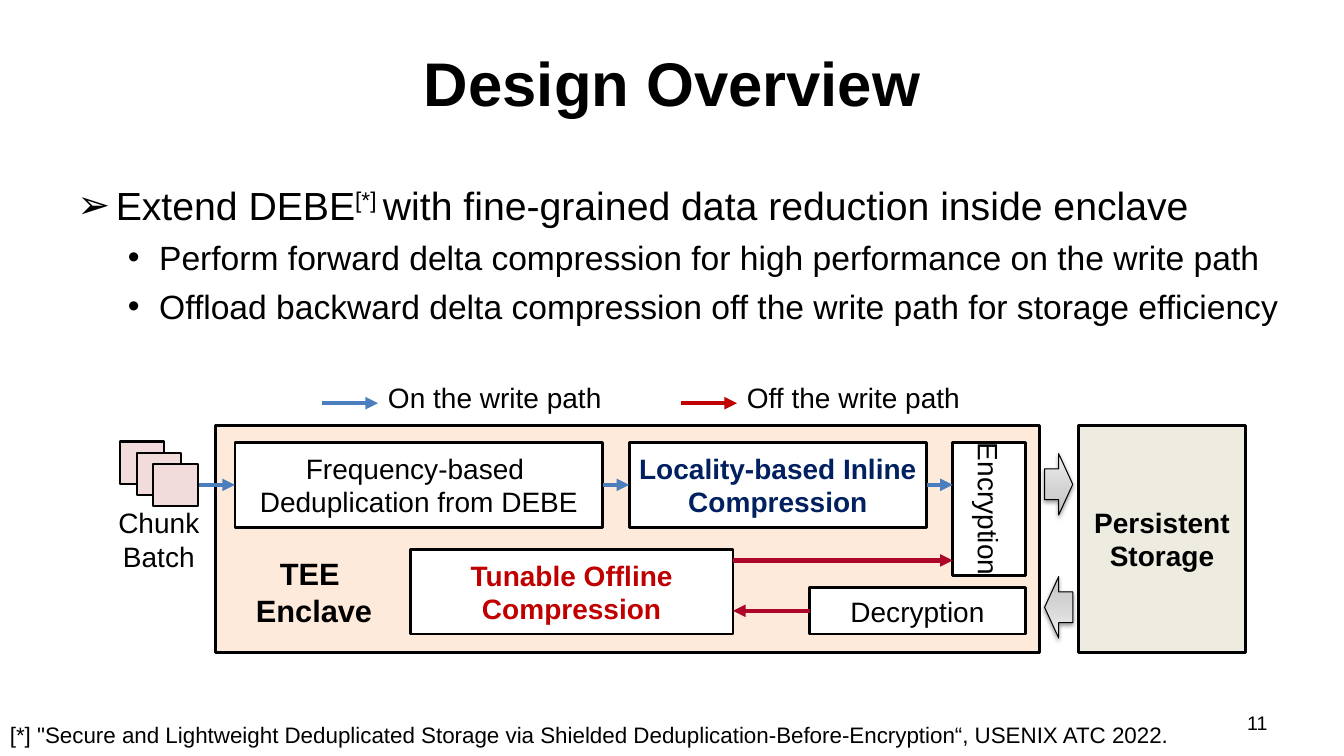
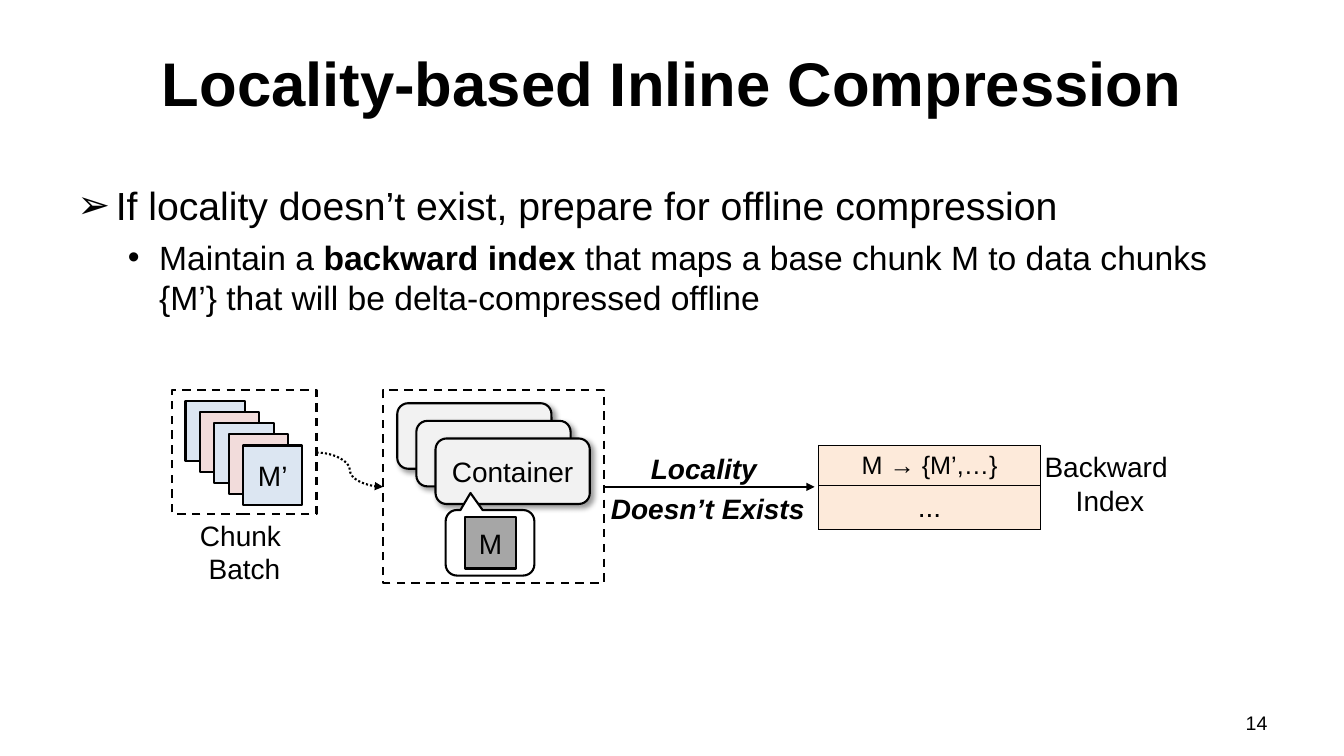
from dataclasses import dataclass

from lxml.etree import SubElement
from pptx import Presentation
from pptx.dml.color import RGBColor
from pptx.enum.dml import MSO_LINE
from pptx.enum.shapes import MSO_CONNECTOR, MSO_SHAPE
from pptx.enum.text import MSO_ANCHOR, PP_ALIGN
from pptx.oxml.ns import qn
from pptx.util import Inches, Pt


@dataclass(frozen=True)
class Theme:
    font: str = "Arial"
    ink: str = "000000"
    paper: str = "FFFFFF"
    peach: str = "FDEADA"
    stone: str = "EEECE1"
    pink: str = "F2DCDB"
    sky: str = "DCE6F2"
    pale: str = "F2F2F2"
    gray: str = "A6A6A6"
    navy: str = "002060"
    red: str = "C00000"
    on_path: str = "4B7EBC"
    off_path: str = "AD0626"
    metal: tuple = ((0, "BDBDBD"), (35, "D1D1D1"), (100, "EEEEEE"))
    title: int = 44
    body: int = 28
    sub: int = 24
    big_label: int = 22
    label: int = 20
    cell: int = 18
    note: int = 16
    number: int = 14


T = Theme()
ARROW_SHADOW = (38, 3.1, 1.6, 90)      # opacity %, blur pt, distance pt, angle
CARD_SHADOW = (40, 4, 3, 45)


@dataclass(frozen=True)
class Box:
    x: float
    y: float
    w: float
    h: float

    def sub(self, x, y, w, h):
        """Box given by its offset from this one."""
        return Box(self.x + x, self.y + y, w, h)

    def inches(self):
        return [Inches(v) for v in (self.x, self.y, self.w, self.h)]


# ---- helpers ----
def rgb(value):
    return RGBColor.from_string(value)


def add_node(parent, tag, **attrs):
    return SubElement(parent, qn(tag), {k: str(v) for k, v in attrs.items()})


def write_text(tf, paragraphs, size=T.label, color=T.ink, bold=False, italic=False,
               align=PP_ALIGN.CENTER, anchor=MSO_ANCHOR.MIDDLE, inset=(0.1, 0.05),
               wrap=True, spacing=None):
    """Fill a frame; a paragraph is a string or a list of (text, overrides)."""
    tf.word_wrap, tf.vertical_anchor = wrap, anchor
    tf.margin_left = tf.margin_right = Inches(inset[0])
    tf.margin_top = tf.margin_bottom = Inches(inset[1])
    if isinstance(paragraphs, str):
        paragraphs = [paragraphs]
    for i, runs in enumerate(paragraphs):
        p = tf.paragraphs[0] if i == 0 else tf.add_paragraph()
        p.alignment = align
        if spacing:
            p.line_spacing = spacing
        for text, own in [(runs, {})] if isinstance(runs, str) else runs:
            r = p.add_run()
            r.text = text
            r.font.name, r.font.size = T.font, Pt(own.get("size", size))
            r.font.bold, r.font.italic = own.get("bold", bold), italic
            r.font.color.rgb = rgb(color)
            if "raised" in own:
                r.font._element.set("baseline", str(own["raised"] * 1000))


def add_text(s, box, paragraphs, anchor=MSO_ANCHOR.TOP, **fmt):
    tb = s.shapes.add_textbox(*box.inches())
    write_text(tb.text_frame, paragraphs, anchor=anchor, **fmt)
    return tb


def add_box(s, box, fill=None, text=None, kind=MSO_SHAPE.RECTANGLE, weight=1.5,
            dash=None, shadow=None, **fmt):
    sp = s.shapes.add_shape(kind, *box.inches())
    if fill:
        sp.fill.solid()
        sp.fill.fore_color.rgb = rgb(fill)
    else:
        sp.fill.background()
    sp.line.color.rgb, sp.line.width = rgb(T.ink), Pt(weight)
    if dash:
        sp.line.dash_style = dash
    sp.shadow.inherit = False
    if shadow:
        opacity, blur, dist, angle = shadow
        effects = sp._element.spPr.find(qn("a:effectLst"))
        outer = add_node(effects, "a:outerShdw", blurRad=Pt(blur), dist=Pt(dist),
                         dir=angle * 60000, rotWithShape=0)
        add_node(add_node(outer, "a:srgbClr", val=T.ink), "a:alpha", val=opacity * 1000)
    if text:
        write_text(sp.text_frame, text, **fmt)
    return sp


def add_arrow(s, x1, y1, x2, y2, color=T.ink, weight=3, kind=MSO_CONNECTOR.STRAIGHT,
              dash=None):
    c = s.shapes.add_connector(kind, *[Inches(v) for v in (x1, y1, x2, y2)])
    c.line.color.rgb, c.line.width = rgb(color), Pt(weight)
    if dash:
        c.line.dash_style = dash
    add_node(c.line._get_or_add_ln(), "a:tailEnd", type="triangle")
    add_node(c._element.spPr, "a:effectLst")


def add_block_arrow(s, box, rotation=0):
    sp = add_box(s, box, T.metal[0][1], kind=MSO_SHAPE.RIGHT_ARROW, weight=0.75,
                 shadow=ARROW_SHADOW)
    sp.rotation = rotation
    sp.fill.gradient()
    sp.fill.gradient_angle = 90
    stops = sp._element.spPr.find(".//" + qn("a:gsLst"))
    for old in list(stops):
        stops.remove(old)
    for pos, color in T.metal:
        add_node(add_node(stops, "a:gs", pos=pos * 1000), "a:srgbClr", val=color)


# ---- shared frame: title, bullets, number ----
def base_slide(prs, title, number, bullets, body):
    s = prs.slides.add_slide(prs.slide_layouts[5])
    ph = s.shapes.title
    ph.left, ph.top, ph.width, ph.height = Box(0.67, 0.19, 12, 1.25).inches()
    write_text(ph.text_frame, title, size=T.title, bold=True)
    add_bullets(s, body, bullets)
    add_text(s, Box(9.56, 7, 3.11, 0.35), number, size=T.number, align=PP_ALIGN.RIGHT)
    return s


def add_bullets(s, box, bullets):
    """First entry is the heading bullet, the others are one level down."""
    tb = add_text(s, box, bullets, size=T.sub, align=PP_ALIGN.LEFT)
    for i, p in enumerate(tb.text_frame.paragraphs):
        left, hang, mark = (0.81, 0.31, "•") if i else (0.38, 0.38, "➢")
        p.level = min(i, 1)
        p.space_before = Pt(6 if i else 0)
        pPr = p._p.get_or_add_pPr()
        pPr.set("marL", str(Inches(left)))
        pPr.set("indent", str(-Inches(hang)))
        add_node(pPr, "a:buFont", typeface=T.font)
        add_node(pPr, "a:buChar", char=mark)


# ---- design overview ----
def legend(s, box):
    entries = [("On the write path", T.on_path), ("Off the write path", T.red)]
    for i, (text, color) in enumerate(entries):
        x = box.x + i * 3.56
        add_arrow(s, x, box.y + 0.27, x + 0.56, box.y + 0.27, color)
        add_text(s, Box(x + 0.56, box.y, 2.33, box.h), text, align=PP_ALIGN.LEFT,
                 wrap=False)


def incoming_chunks(s, box):
    for i in range(3):
        add_box(s, box.sub(i * 0.165, i * 0.11, 0.44, 0.42), T.pink)
    add_text(s, box.sub(-0.52, 0.59, 1.81, 0.77), ["Chunk", "Batch"])
    add_arrow(s, box.x + 0.78, box.y + 0.43, box.x + 1.14, box.y + 0.43, T.on_path)


def enclave(s, box):
    add_box(s, box, T.peach, weight=2)
    add_text(s, box.sub(0.07, 1.23, 1.81, 0.84), ["TEE ", "Enclave"],
             size=T.big_label, bold=True)
    stages = [
        ((0.19, 0.17, 3.65, 0.84), ["Frequency-based ", "Deduplication from DEBE"],
         dict(inset=(0, 0))),
        ((4.1, 0.17, 2.95, 0.84), "Locality-based Inline Compression",
         dict(inset=(0, 0.05), bold=True, color=T.navy)),
        ((1.93, 1.23, 3.2, 0.84), "Tunable Offline Compression",
         dict(bold=True, color=T.red)),
        ((5.89, 1.61, 2.14, 0.46), "Decryption", {}),
    ]
    for place, text, fmt in stages:
        add_box(s, box.sub(*place), T.paper, text, weight=2, **fmt)
    encryption = add_box(s, box.sub(7.01, 0.47, 1.32, 0.72), T.paper, "Encryption",
                         weight=2, inset=(0, 0.05))
    encryption.rotation = 90
    flows = [(3.84, 4.1, 0.59, T.on_path), (7.05, 7.31, 0.59, T.on_path),
             (5.13, 7.31, 1.34, T.off_path), (5.89, 5.13, 1.84, T.off_path)]
    for start, end, y, color in flows:
        add_arrow(s, box.x + start, box.y + y, box.x + end, box.y + y, color)


def storage(s, box):
    add_box(s, box, T.stone, "Persistent Storage", weight=2, bold=True)
    for y, rotation in ((0.28, 0), (1.5, 180)):
        add_block_arrow(s, box.sub(-0.34, y, 0.28, 0.61), rotation)


def overview_slide(prs):
    heading = [("Extend DEBE", dict(size=T.body)),
               ("[*] ", dict(size=T.body, raised=30)),
               ("with fine-grained data reduction inside enclave", dict(size=T.body))]
    s = base_slide(prs, "Design Overview", "11", [
        heading,
        "Perform forward delta compression for high performance on the write path",
        "Offload backward delta compression off the write path for storage efficiency",
    ], Box(0.67, 1.75, 12.18, 1.7))
    legend(s, Box(3.19, 3.73, 6.44, 0.44))
    storage(s, Box(10.7, 4.22, 1.65, 2.25))
    enclave(s, Box(2.14, 4.22, 8.17, 2.25))
    incoming_chunks(s, Box(1.19, 4.38, 0.78, 0.64))
    add_text(s, Box(0, 7.11, 11.83, 0.37),
             '[*] "Secure and Lightweight Deduplicated Storage via Shielded '
             'Deduplication-Before-Encryption“, USENIX ATC 2022.',
             size=T.note, align=PP_ALIGN.LEFT, wrap=False)


# ---- inline compression ----
def chunk_batch(s, box):
    for i in range(5):
        add_box(s, box.sub(0.13 + i * 0.1425, 0.11 + i * 0.11, 0.59, 0.59),
                T.pink if i % 2 else T.sky, "M’" if i == 4 else None, inset=(0, 0))
    add_box(s, box, dash=MSO_LINE.DASH)
    add_text(s, box.sub(0, 1.22, box.w, 0.77), ["Chunk ", "Batch"])


def container_store(s, box):
    for i in range(3):
        add_box(s, box.sub(0.14 + i * 0.19, 0.13 + i * 0.175, 1.53, 0.65), T.pale,
                "Container" if i == 2 else None, kind=MSO_SHAPE.ROUNDED_RECTANGLE,
                shadow=CARD_SHADOW, inset=(0, 0))
    add_box(s, box, dash=MSO_LINE.DASH)
    callout = add_box(s, box.sub(0.62, 1.19, 0.88, 0.65), T.paper,
                      kind=MSO_SHAPE.ROUNDED_RECTANGULAR_CALLOUT)
    for i, value in enumerate((-0.22, -0.76, 0.17)):
        callout.adjustments[i] = value
    add_box(s, box.sub(0.81, 1.26, 0.51, 0.51), T.gray, "M")


def backward_index(s, box):
    rows = [("M → {M’,…}", T.cell, 0.4), ("...", T.label, 0.43)]
    table = s.shapes.add_table(len(rows), 1, *box.inches()).table
    table.first_row = table.horz_banding = False
    table.columns[0].width = Inches(box.w)
    for i, (text, size, height) in enumerate(rows):
        table.rows[i].height = Inches(height)
        cell = table.cell(i, 0)
        tcPr = cell._tc.get_or_add_tcPr()
        for side in "LRTB":
            ln = add_node(tcPr, "a:ln" + side, w=Pt(1))
            add_node(add_node(ln, "a:solidFill"), "a:srgbClr", val=T.ink)
        cell.fill.solid()
        cell.fill.fore_color.rgb = rgb(T.peach)
        write_text(cell.text_frame, text, size=size)
        cell.vertical_anchor = MSO_ANCHOR.MIDDLE
    add_text(s, box.sub(1.84, -0.01, 2.1, 0.77), ["Backward ", "Index"])


def inline_slide(prs):
    s = base_slide(prs, "Locality-based Inline Compression", "14", [
        [("If locality doesn’t exist, prepare for offline compression",
          dict(size=T.body))],
        [("Maintain a ", {}), ("backward index", dict(bold=True)),
         (" that maps a base chunk M to data chunks {M’} that will be "
          "delta-compressed offline", {})],
    ], Box(0.67, 1.75, 12, 1.7))
    add_text(s, Box(5.92, 4.36, 2.2, 0.87), ["Locality ", "Doesn’t Exists"],
             bold=True, italic=True, spacing=1.2)
    chunk_batch(s, Box(1.71, 3.87, 1.43, 1.23))
    container_store(s, Box(3.8, 3.87, 2.19, 1.91))
    add_arrow(s, 3.14, 4.49, 3.8, 4.83, weight=1.5, kind=MSO_CONNECTOR.CURVE,
              dash=MSO_LINE.ROUND_DOT)
    add_arrow(s, 5.99, 4.83, 8.08, 4.83, weight=1.5)
    backward_index(s, Box(8.12, 4.42, 2.2, 0.83))


def main():
    prs = Presentation()
    prs.slide_width, prs.slide_height = Inches(13.33), Inches(7.5)
    overview_slide(prs)
    inline_slide(prs)
    prs.save("out.pptx")


if __name__ == "__main__":
    main()
